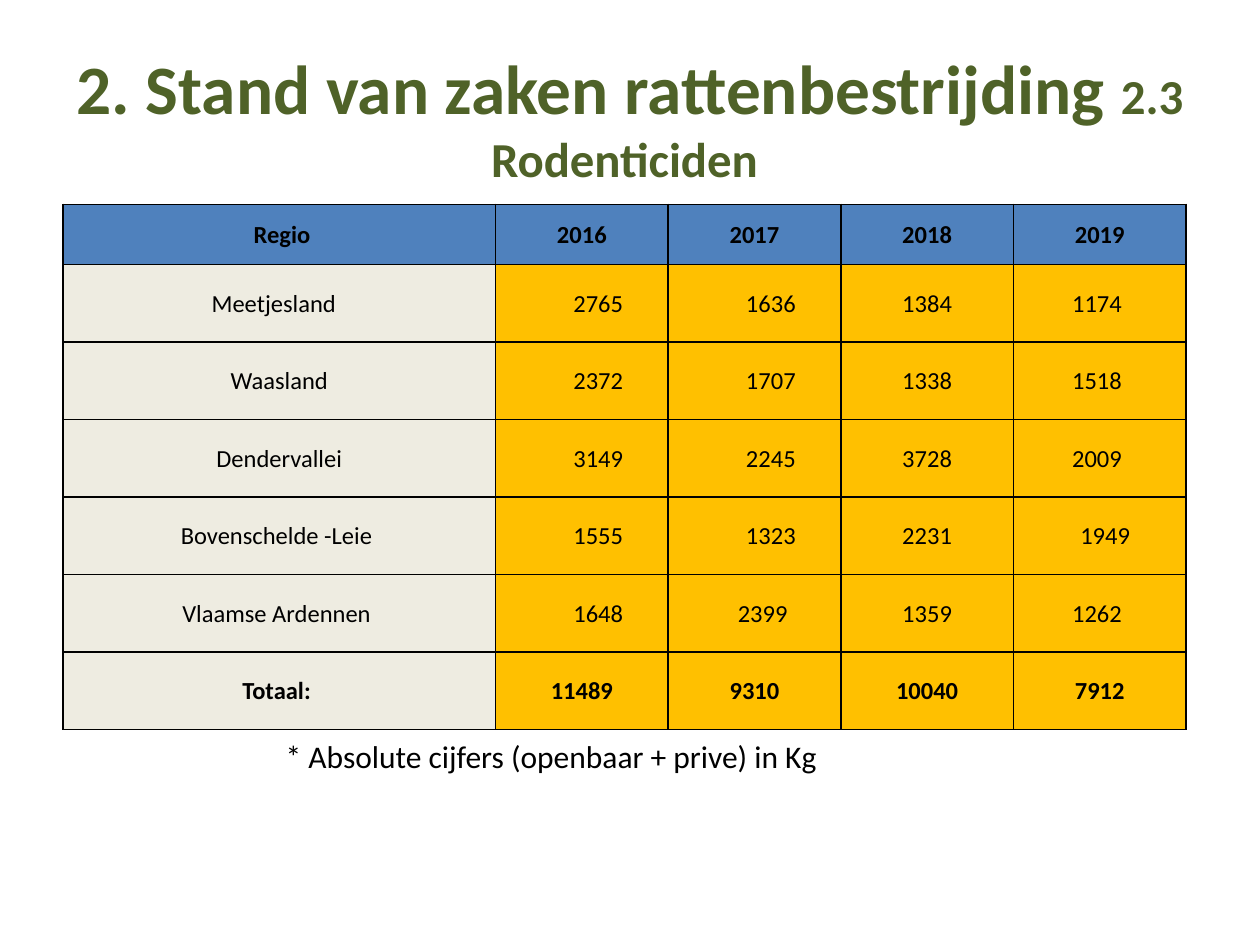
from dataclasses import dataclass

from lxml import etree
from pptx import Presentation
from pptx import util as u
from pptx.dml.color import RGBColor
from pptx.enum import text
from pptx.oxml import ns


@dataclass(frozen=True)
class Theme:
    """Colours, font and type sizes of the slide."""
    font: str = "Calibri"
    green: str = "4F6228"
    black: str = "000000"
    header: str = "4F81BD"
    region: str = "EEECE1"
    figures: str = "FFC000"
    title_size: float = 39.6
    subtitle_size: float = 27.9
    note_size: float = 18
    table_size: float = 14


THEME = Theme()
YEARS = ["2016", "2017", "2018", "2019"]
KILOS = {
    "Meetjesland": [2765, 1636, 1384, 1174],
    "Waasland": [2372, 1707, 1338, 1518],
    "Dendervallei": [3149, 2245, 3728, 2009],
    "Bovenschelde -Leie": [1555, 1323, 2231, 1949],
    "Vlaamse Ardennen": [1648, 2399, 1359, 1262],
}
YEAR_SHIFTS = [0.66, 0.66, 0, -0.11]
CELL_SHIFTS = {
    "Regio": 0.11, "Meetjesland": -0.22, "Bovenschelde -Leie": -0.11,
    "Vlaamse Ardennen": -0.11, "Totaal:": -0.11, "2399": 0.33, "1949": 0.22,
}


def apply_format(target, values):
    """Set every attribute named in the dict on the target."""
    for name, value in values.items():
        setattr(target, name, value)


def add_run(paragraph, words, size, colour, bold=False):
    """Append a run in the theme font."""
    run = paragraph.add_run()
    run.text = words
    apply_format(run.font, {"name": THEME.font, "size": u.Pt(size), "bold": bold})
    run.font.color.rgb = RGBColor.from_string(colour)


def add_border(cell):
    """Draw a thin black line on all four sides of a cell."""
    properties = cell._tc.get_or_add_tcPr()
    for position, side in enumerate(("lnL", "lnR", "lnT", "lnB")):
        line = etree.Element(ns.qn(f"a:{side}"), w=str(u.Pt(1)))
        fill = etree.SubElement(line, ns.qn("a:solidFill"))
        etree.SubElement(fill, ns.qn("a:srgbClr"), val=THEME.black)
        properties.insert(position, line)


def add_title(slide, left, top, width, height):
    """Place the centred heading with its smaller subsection."""
    frame = slide.shapes.add_textbox(*map(u.Cm, (left, top, width, height))).text_frame
    apply_format(frame, {"word_wrap": True, "vertical_anchor": text.MSO_ANCHOR.MIDDLE})
    heading = frame.paragraphs[0]
    heading.alignment = text.PP_ALIGN.CENTER
    add_run(heading, "2. Stand van zaken rattenbestrijding ", THEME.title_size, THEME.green, True)
    add_run(heading, "2.3 Rodenticiden ", THEME.subtitle_size, THEME.green, True)


def fill_cell(cell, words, colour, bold, shift):
    """Write one centred cell, nudged sideways by the shift in centimetres."""
    apply_format(cell, {
        "margin_left": u.Cm(0.03 + max(shift, 0)),
        "margin_right": u.Cm(0.03 + max(-shift, 0)),
        "margin_top": u.Cm(0.03),
        "margin_bottom": 0,
        "vertical_anchor": text.MSO_ANCHOR.MIDDLE,
    })
    cell.fill.solid()
    cell.fill.fore_color.rgb = RGBColor.from_string(colour)
    add_border(cell)
    label = cell.text_frame.paragraphs[0]
    label.alignment = text.PP_ALIGN.CENTER
    add_run(label, words, THEME.table_size, THEME.black, bold)


def add_kilo_table(slide, left, top, width, height):
    """Place the table of kilograms per region and year, with totals."""
    totals = [sum(year) for year in zip(*KILOS.values())]
    rows = [["Regio", *YEARS], *([region, *kilos] for region, kilos in KILOS.items()),
            ["Totaal:", *totals]]
    last_row = len(rows) - 1
    box = map(u.Cm, (left, top, width, height))
    table = slide.shapes.add_table(len(rows), len(rows[0]), *box).table
    year_width, header_height = 3.48, 1.21
    for index, column in enumerate(table.columns):
        column.width = u.Cm(year_width if index else width - year_width * len(YEARS))
    for index, row in enumerate(table.rows):
        row.height = u.Cm((height - header_height) / last_row if index else header_height)
    for row_index, row in enumerate(rows):
        outer = row_index in (0, last_row)
        for column_index, value in enumerate(row):
            words = str(value)
            body_colour = THEME.figures if column_index else THEME.region
            shift = 0 if outer or not column_index else YEAR_SHIFTS[column_index - 1]
            fill_cell(table.cell(row_index, column_index), words,
                      body_colour if row_index else THEME.header,
                      outer, CELL_SHIFTS.get(words, shift))


def add_note(slide, left, top, width, height):
    """Place the remark on units below the table."""
    frame = slide.shapes.add_textbox(*map(u.Cm, (left, top, width, height))).text_frame
    apply_format(frame, {"word_wrap": True, "auto_size": text.MSO_AUTO_SIZE.SHAPE_TO_FIT_TEXT})
    add_run(frame.paragraphs[0], "* Absolute cijfers (openbaar + prive) in Kg",
            THEME.note_size, THEME.black)


def main():
    """Build the slide and save it."""
    deck = Presentation()
    apply_format(deck, {"slide_width": u.Cm(25.4), "slide_height": u.Cm(19.05)})
    slide = deck.slides.add_slide(deck.slide_layouts[6])
    add_title(slide, 1.27, 0.76, 22.86, 3.18)
    add_note(slide, 5.51, 14.73, 13.41, 1.02)
    add_kilo_table(slide, 1.27, 4.12, 22.64, 10.59)
    deck.save("out.pptx")


if __name__ == "__main__":
    main()
